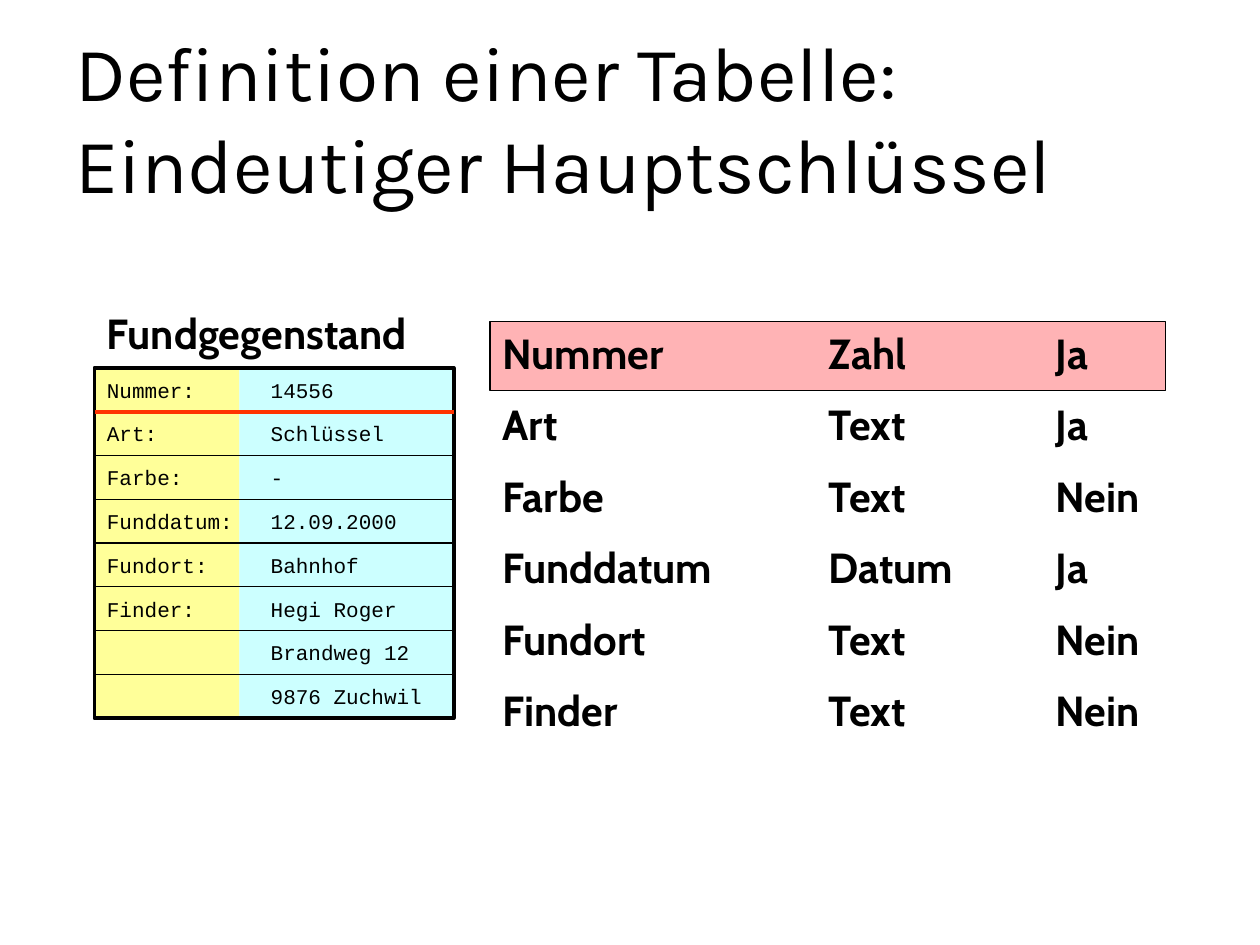
from pptx import Presentation
from pptx.dml.color import RGBColor
from pptx.enum.shapes import MSO_CONNECTOR, MSO_SHAPE
from pptx.enum.text import MSO_ANCHOR, PP_ALIGN
from pptx.oxml.ns import qn
from pptx.util import Inches, Pt
from lxml import etree

RECT, LINE = MSO_SHAPE.RECTANGLE, MSO_CONNECTOR.STRAIGHT
TOP, MIDDLE, LEFT = MSO_ANCHOR.TOP, MSO_ANCHOR.MIDDLE, PP_ALIGN.LEFT
BLACK = "000000"
UNIT = 0.1  # inches; the slide is a grid of 100 columns by 75 rows

CARD = [
    ("Nummer:", "14556"),
    ("Art:", "Schlüssel"),
    ("Farbe:", "-"),
    ("Funddatum:", "12.09.2000"),
    ("Fundort:", "Bahnhof"),
    ("Finder:", "Hegi Roger"),
    ("", "Brandweg 12"),
    ("", "9876 Zuchwil"),
]
FIELDS = [
    (38.9, 20.2, ["Nummer", "Art", "Farbe", "Funddatum", "Fundort", "Finder"]),
    (64.8, 13.4, ["Zahl", "Text", "Text", "Datum", "Text", "Text"]),
    (82.8, 9.7, ["Ja", "Ja", "Nein", "Ja", "Nein", "Nein"]),
]


def grid(*cells):
    return [Inches(cell * UNIT) for cell in cells]


def color(code):
    return RGBColor.from_string(code)


class Deck:
    head, body, mono = ("Karla", 44, False), ("Cabin", 24, True), ("Courier New", 12, False)

    def __init__(self):
        self.file = Presentation()
        self.file.slide_width, self.file.slide_height = grid(100, 75)
        self.slide = self.file.slides.add_slide(self.file.slide_layouts[6])

    def label(self, shape, lines, style, anchor=TOP, gap=0, tab=None):
        """Fill a shape with one paragraph per line; tab is a stop in grid columns."""
        frame = shape.text_frame
        frame.word_wrap = True
        frame.vertical_anchor = anchor
        frame.text = "\n".join(lines)
        name, size, bold = style
        for par in frame.paragraphs:
            par.alignment = LEFT
            par.space_before = Pt(gap)
            if tab:
                stops = etree.SubElement(par._p.get_or_add_pPr(), qn("a:tabLst"))
                etree.SubElement(stops, qn("a:tab"), pos=str(grid(tab)[0]), algn="l")
            font = par.font
            font.name, font.size, font.bold = name, Pt(size), bold
            font.color.rgb = color(BLACK)

    def text(self, box, lines, style, anchor=TOP, gap=0):
        self.label(self.slide.shapes.add_textbox(*grid(*box)), lines, style, anchor, gap)

    def rect(self, box, fill=None, width=0):
        shape = self.slide.shapes.add_shape(RECT, *grid(*box))
        shape.shadow.inherit = False
        if fill:
            shape.fill.solid()
            shape.fill.fore_color.rgb = color(fill)
        else:
            shape.fill.background()
        if width:
            shape.line.color.rgb = color(BLACK)
            shape.line.width = Pt(width)
        else:
            shape.line.fill.background()
        return shape

    def rule(self, left, right, y, code, width):
        line = self.slide.shapes.add_connector(LINE, *grid(left, y, right, y))
        line.line.color.rgb = color(code)
        line.line.width = Pt(width)
        etree.SubElement(line._element.spPr, qn("a:effectLst"))

    def card(self, left, top, split, width, height):
        """Draw the record card: two coloured columns, ruled rows, a red key line."""
        self.rect((left, top, split, height), "FFFF99")
        self.rect((left + split, top, width - split, height), "CCFFFF")
        self.rect((left, top, width, height), width=2.25)
        step = height / len(CARD)
        for row, pair in enumerate(CARD):
            shape = self.rect((left, top + row * step, width, step), width=0.75)
            self.label(shape, ["\t".join(pair)], self.mono, MIDDLE, tab=13)
        self.rule(left, left + width, top + step, "FF3300", 2.25)


def main():
    deck = Deck()
    deck.text((5, 3, 90, 12.5), ["Definition einer Tabelle: Eindeutiger Hauptschlüssel"],
              deck.head, MIDDLE)
    deck.rect((38.9, 25.5, 53.6, 5.5), "FFB3B5", 0.75)
    deck.card(7.5, 29.2, 11.5, 28.5, 27.8)
    for left, width, lines in FIELDS:
        deck.text((left, 25.5, width, 36), lines, deck.body, gap=12)
    deck.text((7.5, 23.9, 32.8, 5.3), ["Fundgegenstand"], deck.body, gap=12)
    deck.file.save("out.pptx")


if __name__ == "__main__":
    main()
